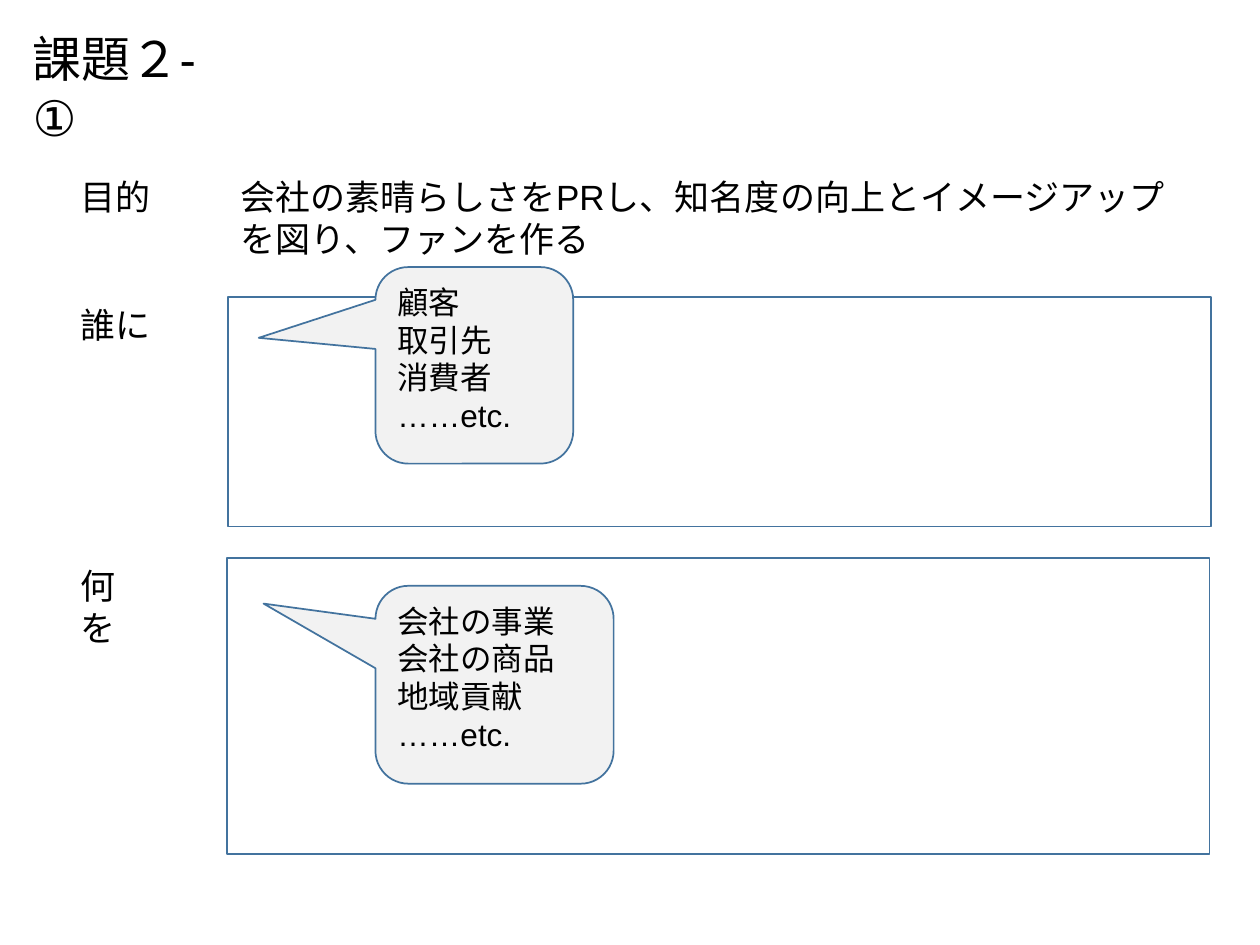
from dataclasses import dataclass

from pptx import Presentation
from pptx import util as u
from pptx.dml.color import RGBColor
from pptx.enum import shapes, text

# Grid: 100 columns by 75 rows over the whole slide
COLUMNS, ROWS = 100, 75
FONT, INK, EDGE, PALE = "Arial", "000000", "43739E", "F2F2F2"
LABEL_COLUMN, FIELD_COLUMN, FIELD_SPAN = 5.4, 18.1, 78
CALLOUT_COLUMN = 29.8

deck = Presentation()
deck.slide_width, deck.slide_height = u.Inches(10), u.Inches(7.5)


@dataclass
class Area:
    column: float
    row: float
    columns: float
    rows: float

    def lengths(self) -> tuple[int, int, int, int]:
        across = deck.slide_width / COLUMNS
        down = deck.slide_height / ROWS
        return (round(self.column * across), round(self.row * down),
                round(self.columns * across), round(self.rows * down))


@dataclass
class Callout:
    area: Area
    tip: tuple[float, float]
    lines: list[str]


@dataclass
class Section:
    label: str
    label_span: float
    field: Area
    callout: Callout


SECTIONS = [
    Section("誰に", 7.6, Area(FIELD_COLUMN, 23.6, FIELD_SPAN, 18.2),
            Callout(Area(CALLOUT_COLUMN, 21.2, 15.7, 15.6), (-1.09, -0.14),
                    ["顧客", "取引先", "消費者", "……etc."])),
    Section("何を", 7.2, Area(18, 44.3, FIELD_SPAN, 23.5),
            Callout(Area(CALLOUT_COLUMN, 46.5, 18.9, 15.7), (-0.97, -0.41),
                    ["会社の事業", "会社の商品", "地域貢献", "……etc."])),
]


def colour(value: str) -> RGBColor:
    return RGBColor.from_string(value)


def write(shape, lines: list[str], size: float) -> None:
    frame = shape.text_frame
    frame.word_wrap = True
    frame.auto_size = text.MSO_AUTO_SIZE.NONE
    frame.vertical_anchor = text.MSO_ANCHOR.TOP
    for index, line in enumerate(lines):
        para = frame.add_paragraph() if index else frame.paragraphs[0]
        para.alignment = text.PP_ALIGN.LEFT
        span = para.add_run()
        span.text = line
        span.font.name, span.font.size = FONT, u.Pt(size)
        span.font.color.rgb = colour(INK)


def add_text(page, area: Area, line: str) -> None:
    write(page.shapes.add_textbox(*area.lengths()), [line], 20)


def add_outlined(page, kind: shapes.MSO_SHAPE, area: Area, fill: str | None = None):
    shape = page.shapes.add_shape(kind, *area.lengths())
    shape.shadow.inherit = False
    shape.line.color.rgb, shape.line.width = colour(EDGE), u.Pt(1)
    if fill:
        shape.fill.solid()
        shape.fill.fore_color.rgb = colour(fill)
    else:
        shape.fill.background()
    return shape


def add_callout(page, callout: Callout) -> None:
    box = add_outlined(page, shapes.MSO_SHAPE.ROUNDED_RECTANGULAR_CALLOUT,
                       callout.area, PALE)
    box.adjustments[0], box.adjustments[1] = callout.tip
    write(box, callout.lines, 18)


def main() -> None:
    page = deck.slides.add_slide(deck.slide_layouts[5])

    # Title
    title = page.shapes.title
    title.left, title.top, title.width, title.height = Area(1.6, 1.8, 18.4, 5.7).lengths()
    write(title, ["課題２-①"], 28)

    # Purpose
    add_text(page, Area(LABEL_COLUMN, 13.4, 7.6, 4.4), "目的")
    add_text(page, Area(FIELD_COLUMN, 13.4, FIELD_SPAN, 7.7),
             "会社の素晴らしさをPRし、知名度の向上とイメージアップを図り、ファンを作る")

    # Answer fields with their hints
    for section in SECTIONS:
        add_text(page, Area(LABEL_COLUMN, section.field.row, section.label_span, 4.4),
                 section.label)
        add_outlined(page, shapes.MSO_SHAPE.RECTANGLE, section.field)
        add_callout(page, section.callout)

    deck.save("out.pptx")


if __name__ == "__main__":
    main()
